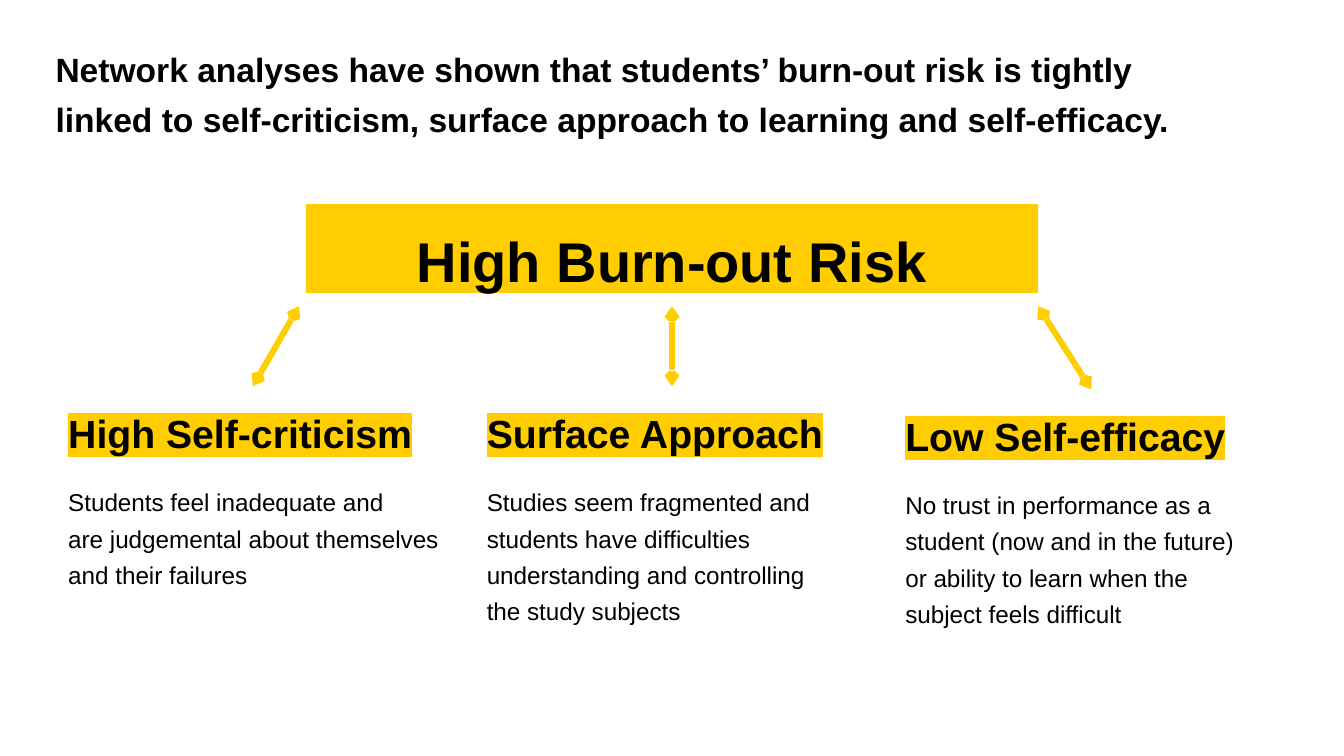
from lxml.etree import SubElement
from pptx import Presentation
from pptx.dml.color import RGBColor
from pptx.enum.shapes import MSO_CONNECTOR as Link, MSO_SHAPE as Shape
from pptx.enum.text import MSO_ANCHOR as Anchor, PP_ALIGN as Align
from pptx.oxml.ns import qn
from pptx.util import Cm, Pt


def color(code):
    return RGBColor.from_string(code)


class Board:
    font = "Arial"
    ink = "000000"
    gold = "FFCD00"
    pitch = 1.25

    def __init__(self, slide):
        self.slide = slide

    def style(self, para, text, size, bold=False, after=0):
        para.text = text
        para.line_spacing = self.pitch
        para.space_after = Pt(after)
        font = para.font
        font.name, font.size, font.bold = self.font, Pt(size), bold
        font.color.rgb = color(self.ink)

    def frame(self, shape, left, top):
        frame = shape.text_frame
        frame.word_wrap = True
        frame.margin_left = frame.margin_right = Cm(left)
        frame.margin_top, frame.margin_bottom = Cm(top), 0
        return frame

    def title(self, text, x, y, w, h):
        box = self.slide.shapes.add_textbox(Cm(x), Cm(y), Cm(w), Cm(h))
        frame = self.frame(box, 0.25, 0.13)
        self.style(frame.paragraphs[0], text, 18, True)

    def bar(self, text, x, y, w, h):
        box = self.slide.shapes.add_shape(
            Shape.RECTANGLE, Cm(x), Cm(y), Cm(w), Cm(h))
        box.shadow.inherit = False
        box.fill.solid()
        box.fill.fore_color.rgb = color(self.gold)
        box.line.fill.background()
        frame = self.frame(box, 0, 0.12)
        frame.vertical_anchor = Anchor.MIDDLE
        para = frame.paragraphs[0]
        self.style(para, text, 30, True)
        para.alignment = Align.CENTER

    def mark(self, run):
        # Highlight behind the text
        light = SubElement(run.font._element, qn("a:highlight"))
        SubElement(light, qn("a:srgbClr"), val=self.gold)

    def column(self, head, body, x, y, w, h):
        box = self.slide.shapes.add_textbox(Cm(x), Cm(y), Cm(w), Cm(h))
        frame = self.frame(box, 0, 0.2)
        para = frame.paragraphs[0]
        self.style(para, head, 21, True, after=10)
        self.mark(para.runs[0])
        para = frame.add_paragraph()
        self.style(para, body, 13, after=12)
        para.space_before = Pt(2.6)

    def arrow(self, x1, y1, x2, y2):
        link = self.slide.shapes.add_connector(
            Link.STRAIGHT, Cm(x1), Cm(y1), Cm(x2), Cm(y2))
        link.line.width = Pt(3.25)
        link.line.color.rgb = color(self.gold)
        line = link.line._get_or_add_ln()
        for end in ("a:headEnd", "a:tailEnd"):
            SubElement(line, qn(end), type="arrow", w="sm", len="sm")
        SubElement(link._element.spPr, qn("a:effectLst"))


def main():
    deck = Presentation()
    deck.slide_width, deck.slide_height = Cm(25.4), Cm(14.29)
    board = Board(deck.slides.add_slide(deck.slide_layouts[6]))

    # Three linked factors: heading, text, top, height
    factors = [
        ("High Self-criticism",
         "Students feel inadequate and\v"
         "are judgemental about themselves and their failures", 7.32, 3.23),
        ("Surface Approach",
         "Studies seem fragmented and students have difficulties "
         "understanding and controlling\vthe study subjects", 7.32, 4.11),
        ("Low Self-efficacy",
         "No trust in performance as a student (now and in the future)\v"
         "or ability to learn when the\vsubject feels difficult", 7.37, 3.23),
    ]
    for i, (head, body, top, high) in enumerate(factors):
        board.column(head, body, 1.29 + 7.91 * i, top, 7.05, high)

    # Central risk
    board.bar("High Burn-out Risk", 5.78, 3.86, 13.84, 1.68)

    # Two-way arrows from the risk to each factor
    for x1, x2, y2 in [(5.65, 4.78, 7.3), (12.7, 12.7, 7.3),
                       (19.62, 20.62, 7.36)]:
        board.arrow(x1, 5.79, x2, y2)

    # Title
    board.title("Network analyses have shown that students’ burn-out risk is "
                "tightly linked to self-criticism, surface approach to "
                "learning and self-efficacy.", 0.8, 0.6, 22.68, 2)

    deck.save("out.pptx")


if __name__ == "__main__":
    main()
